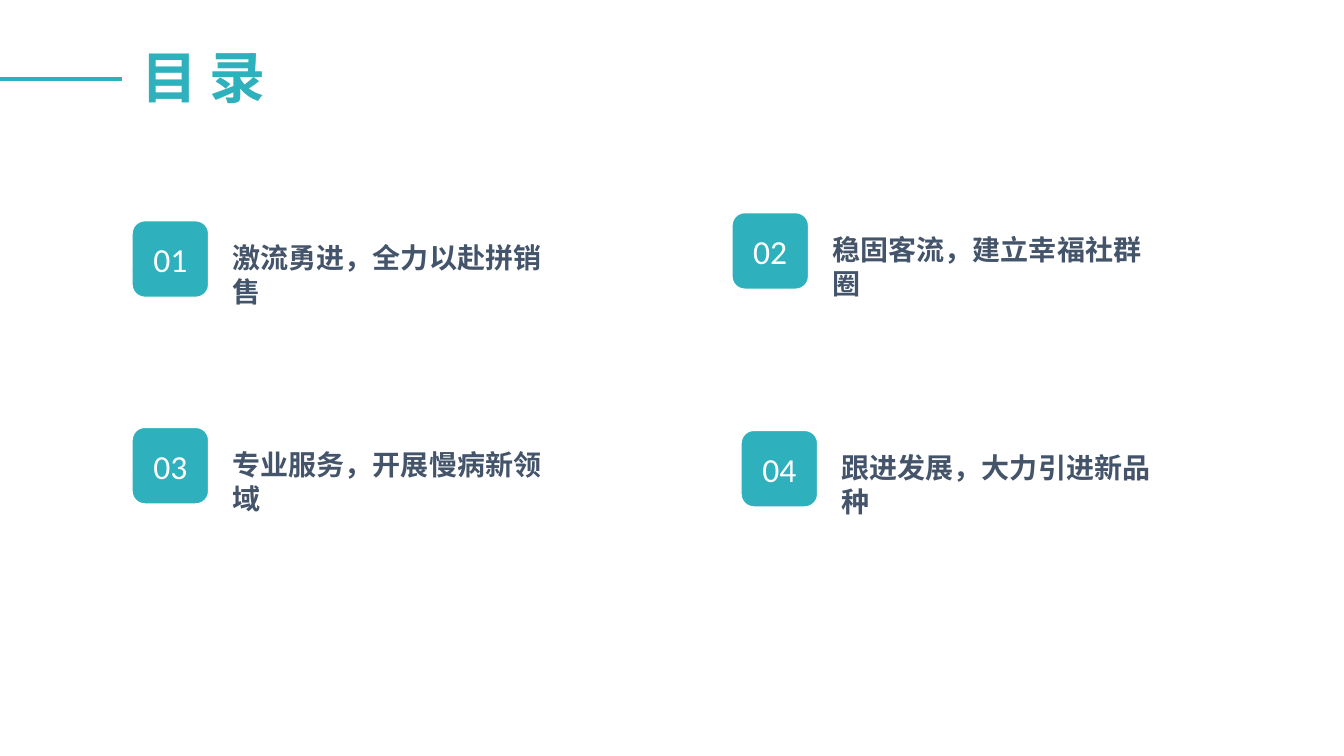
from dataclasses import dataclass

from lxml.etree import SubElement
from pptx import Presentation
from pptx.dml.color import RGBColor
from pptx.enum.shapes import MSO_CONNECTOR, MSO_SHAPE
from pptx.enum.text import MSO_ANCHOR, MSO_AUTO_SIZE, PP_ALIGN
from pptx.oxml.ns import qn
from pptx.util import Inches, Pt


@dataclass(frozen=True)
class Theme:
    font: str = "Calibri"
    teal: RGBColor = RGBColor(0x2E, 0xB0, 0xBD)
    slate: RGBColor = RGBColor(0x44, 0x54, 0x6A)
    white: RGBColor = RGBColor(0xFF, 0xFF, 0xFF)
    title_size: int = 40
    number_size: int = 24
    caption_size: int = 20


THEME = Theme()
BADGE_SIDE = 0.76

# Agenda entries: number, caption, left and top of the entry
ENTRIES = [
    ("01", "激流勇进，全力以赴拼销售", 1.31, 2.19),
    ("02", "稳固客流，建立幸福社群圈", 7.26, 2.11),
    ("03", "专业服务，开展慢病新领域", 1.31, 4.24),
    ("04", "跟进发展，大力引进新品种", 7.35, 4.27),
]


def place(part, left, top, width, height):
    box = {"left": left, "top": top, "width": width, "height": height}
    for name, length in box.items():
        setattr(part, name, Inches(length))


def write(part, wording, size, color, bold=False, align=PP_ALIGN.LEFT,
          anchor=MSO_ANCHOR.TOP, wrap=True):
    frame = part.text_frame
    frame_format = {"text": wording, "word_wrap": wrap,
                    "auto_size": MSO_AUTO_SIZE.NONE, "vertical_anchor": anchor}
    for name, value in frame_format.items():
        setattr(frame, name, value)
    paragraph = frame.paragraphs[0]
    paragraph.alignment = align
    font = paragraph.runs[0].font
    font_format = {"name": THEME.font, "size": Pt(size), "bold": bold}
    for name, value in font_format.items():
        setattr(font, name, value)
    font.color.rgb = color


def add_heading(slide, left, top, width, height):
    # Title
    heading = slide.shapes.title
    place(heading, left, top, width, height)
    write(heading, "目 录", THEME.title_size, THEME.teal, bold=True, wrap=False)

    # Rule running in from the slide edge
    rule_y = Inches(top + 0.41)
    rule = slide.shapes.add_connector(
        MSO_CONNECTOR.STRAIGHT, 0, rule_y, Inches(left - 0.09), rule_y)
    rule.line.color.rgb = THEME.teal
    rule.line.width = Pt(3)
    SubElement(rule._element.spPr, qn("a:effectLst"))


def add_entry(slide, number, caption, left, top):
    # Number badge
    badge = slide.shapes.add_shape(
        MSO_SHAPE.ROUNDED_RECTANGLE, Inches(left), Inches(top),
        Inches(BADGE_SIDE), Inches(BADGE_SIDE))
    badge.shadow.inherit = False
    badge.fill.solid()
    badge.fill.fore_color.rgb = THEME.teal
    badge.line.color.rgb = THEME.white
    badge.line.width = Pt(1)
    write(badge, number, THEME.number_size, THEME.white,
          align=PP_ALIGN.CENTER, anchor=MSO_ANCHOR.MIDDLE)

    # Caption beside the badge
    label = slide.shapes.add_textbox(
        Inches(left + 0.9), Inches(top + 0.15), Inches(3.5), Inches(0.44))
    write(label, caption, THEME.caption_size, THEME.slate, bold=True)


def main():
    deck = Presentation()
    deck.slide_width = Inches(13.33)
    deck.slide_height = Inches(7.5)
    agenda = deck.slides.add_slide(deck.slide_layouts.get_by_name("Title Only"))
    add_heading(agenda, 1.3, 0.37, 1.45, 0.77)
    for entry in ENTRIES:
        add_entry(agenda, *entry)
    deck.save("out.pptx")


if __name__ == "__main__":
    main()
